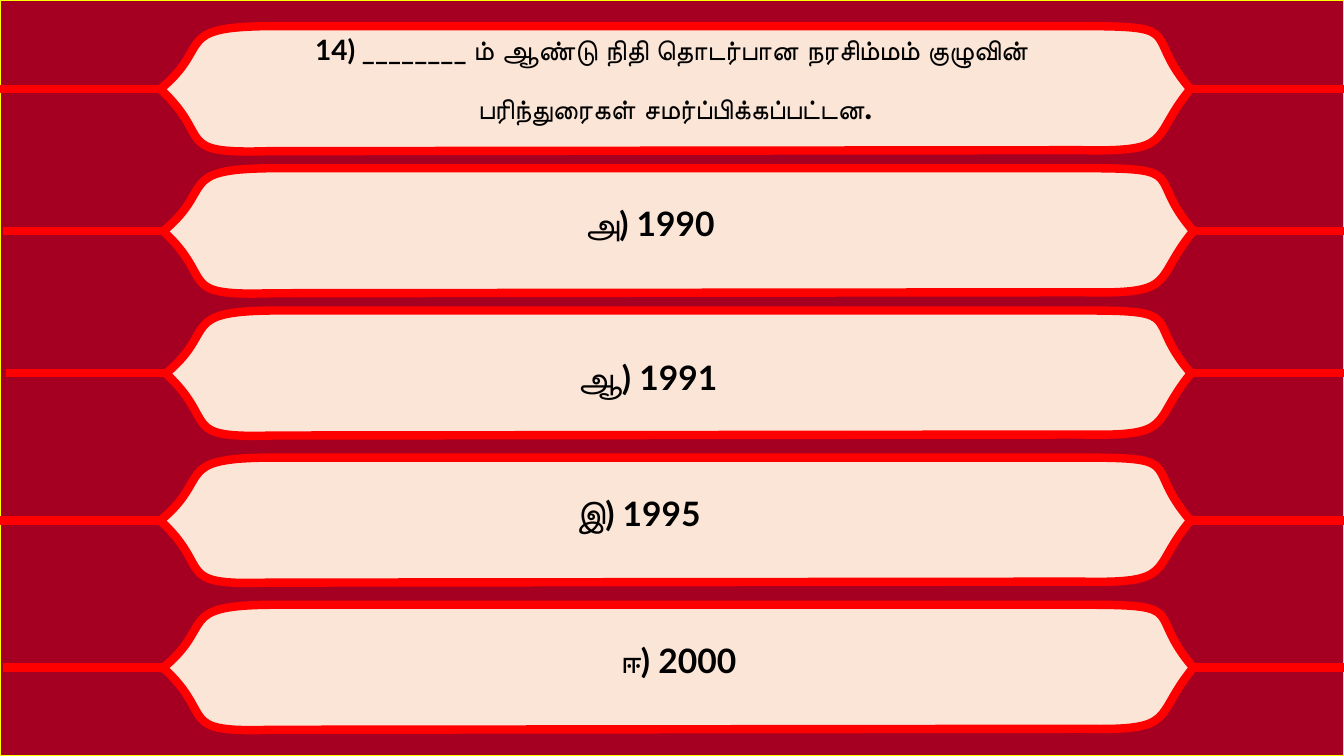
from pptx import Presentation
from pptx.dml.color import RGBColor
from pptx.enum.shapes import MSO_CONNECTOR, MSO_SHAPE
from pptx.enum.text import MSO_ANCHOR, PP_ALIGN
from pptx.oxml.ns import qn
from pptx.util import Pt
from lxml.etree import SubElement

QUESTION = [
    [("14) ________ ம் ஆண்டு நிதி தொடர்பான நரசிம்மம் குழுவின் ", 20)],
    [("பரிந்துரைகள் சமர்ப்பிக்கப்பட்டன", 20), (".", 24)],
]
BANNERS = [
    {"top": 18.7, "shift": 0, "width": 735.8, "end": 960, "lines": QUESTION, "right_inset": 7.2},
    {"top": 120.2, "shift": 2.1, "width": 735.8, "end": 962.1,
     "lines": [[("அ) 1990", 24)]], "right_inset": 48},
    {"top": 221.8, "shift": 4, "width": 732.2, "end": 960, "lines": [], "right_inset": 7.2},
    {"top": 326.9, "shift": 0, "width": 735.8, "end": 960,
     "lines": [[("இ) 1995", 24)]], "right_inset": 60},
    {"top": 432, "shift": 2.1, "width": 735.8, "end": 962.1,
     "lines": [[("ஈ) 2000", 24)]], "right_inset": 7.2},
]
FLOATING_ANSWER = [[("ஆ) 1991", 24)]]

THEME = {
    "back": RGBColor(0xA5, 0x00, 0x21),
    "frame": RGBColor(0xFF, 0xFF, 0x00),
    "rule": RGBColor(0xFF, 0x00, 0x00),
    "panel": RGBColor(0xFB, 0xE5, 0xD6),
    "text": RGBColor(0x00, 0x00, 0x00),
    "font": "Lato",
    "rule_width": 6,
}
WIDTH, HEIGHT = 960, 540
BANNER_LEFT, BANNER_WIDTH, RULE_DROP = 114.5, 735.8, 44.8
BOTTOM_INSET = 28.6
OUTLINE_START = (0, 45)
OUTLINE = [
    [(37.4, 14.4), (8.6, 0.7), (77, 0)],
    [(658.8, 0)],
    [(734.4, 0), (701.3, 5), (735.8, 44.9)],
    [(706.3, 80.6), (725.8, 90), (657.4, 88.6)],
    [(77, 89.3)],
    [(7.9, 91.4), (38.2, 79.9), OUTLINE_START],
]


def paint(shape, fill, line, width):
    shape.shadow.inherit = False
    shape.fill.solid()
    shape.fill.fore_color.rgb = fill
    shape.line.color.rgb = line
    shape.line.width = Pt(width)


def write(frame, lines):
    frame.word_wrap = True
    for index, spans in enumerate(lines):
        para = frame.paragraphs[0] if index == 0 else frame.add_paragraph()
        para.alignment = PP_ALIGN.CENTER
        para.line_spacing = 1.5
        para.font.name = THEME["font"]
        para.font.bold = True
        para.font.color.rgb = THEME["text"]
        for text, size in spans:
            span = para.add_run()
            span.text = text
            span.font.size = Pt(size)


def add_panel(group, left, top, stretch):
    def place(point):
        return Pt(left + point[0] * stretch), Pt(top + point[1])

    builder = group.shapes.build_freeform(*place(OUTLINE_START))
    builder.add_line_segments([place(segment[-1]) for segment in OUTLINE], close=True)
    panel = builder.convert_to_shape()
    outline = next(panel._element.spPr.iter(qn("a:path")))
    for old, segment in zip(outline.findall(qn("a:lnTo")), OUTLINE):
        if len(segment) == 3:
            curve = outline.makeelement(qn("a:cubicBezTo"))
            for x, y in segment:
                SubElement(curve, qn("a:pt"), x=str(Pt(x * stretch)), y=str(Pt(y)))
            outline.replace(old, curve)
    return panel


def add_banner(page, banner):
    group = page.shapes.add_group_shape()
    rule_y = Pt(banner["top"] + RULE_DROP)
    rule = group.shapes.add_connector(
        MSO_CONNECTOR.STRAIGHT, Pt(banner["shift"]), rule_y, Pt(banner["end"]), rule_y)
    rule.line.color.rgb = THEME["rule"]
    rule.line.width = Pt(THEME["rule_width"])
    SubElement(rule._element.spPr, qn("a:effectLst"))

    panel = add_panel(group, BANNER_LEFT + banner["shift"], banner["top"],
                      banner["width"] / BANNER_WIDTH)
    paint(panel, THEME["panel"], THEME["rule"], THEME["rule_width"])
    frame = panel.text_frame
    frame.vertical_anchor = MSO_ANCHOR.MIDDLE
    frame.margin_right = Pt(banner["right_inset"])
    frame.margin_bottom = Pt(BOTTOM_INSET)
    write(frame, banner["lines"])


def main():
    deck = Presentation()
    deck.slide_width, deck.slide_height = Pt(WIDTH), Pt(HEIGHT)
    page = deck.slides.add_slide(deck.slide_layouts[6])
    back = page.shapes.add_shape(MSO_SHAPE.RECTANGLE, 0, 0, Pt(WIDTH), Pt(HEIGHT))
    paint(back, THEME["back"], THEME["frame"], 1)
    for banner in BANNERS:
        add_banner(page, banner)
    box = page.shapes.add_textbox(Pt(229), Pt(236.9), Pt(501.8), Pt(47.5))
    box.text_frame.margin_right = Pt(42)
    write(box.text_frame, FLOATING_ANSWER)
    deck.save("out.pptx")


if __name__ == "__main__":
    main()
